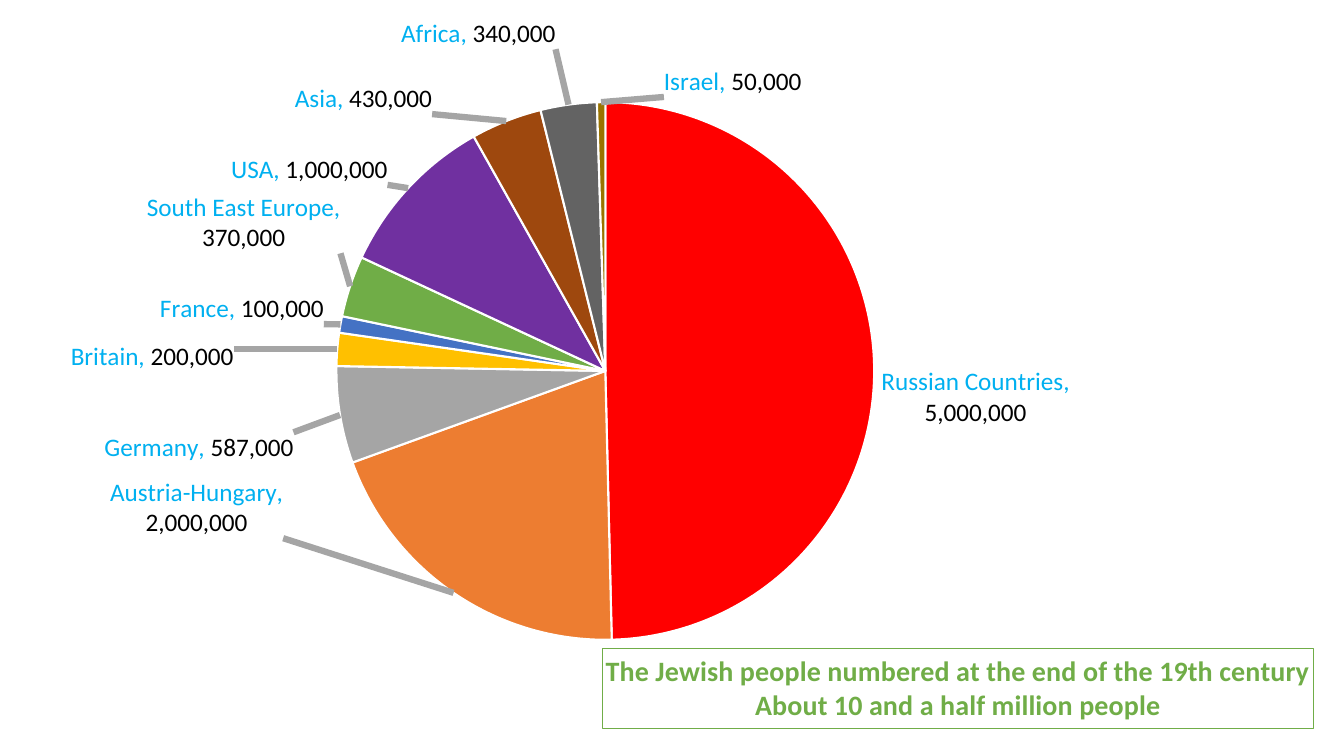
from pptx import Presentation
from pptx.chart.data import CategoryChartData
from pptx.dml.color import RGBColor
from pptx.enum.chart import XL_CHART_TYPE, XL_LABEL_POSITION
from pptx.oxml import parse_xml
from pptx.oxml.ns import nsdecls, qn
from pptx.util import Inches, Pt

RED = RGBColor(0xFF, 0x00, 0x00)
ORANGE = RGBColor(0xED, 0x7D, 0x31)
GRAY = RGBColor(0xA5, 0xA5, 0xA5)
YELLOW = RGBColor(0xFF, 0xC0, 0x00)
BLUE = RGBColor(0x44, 0x72, 0xC4)
GREEN = RGBColor(0x70, 0xAD, 0x47)
PURPLE = RGBColor(0x70, 0x30, 0xA0)
BROWN = RGBColor(0x9E, 0x48, 0x0E)
DARK_GRAY = RGBColor(0x63, 0x63, 0x63)
OLIVE = RGBColor(0x99, 0x73, 0x00)
SKY = RGBColor(0x00, 0xB0, 0xF0)
BLACK = RGBColor(0x00, 0x00, 0x00)
WHITE = RGBColor(0xFF, 0xFF, 0xFF)

FONT = "Calibri"
TITLE_LINES = (
    "The Jewish people numbered at the end of the 19th century",
    "About 10 and a half million people",
)
# region, population, slice colour, label shift as a share of the chart size
REGIONS = [
    ("Russian Countries", 5000000, RED, (0.001, 0.04)),
    ("Austria-Hungary", 2000000, ORANGE, (-0.123, -0.163)),
    ("Germany", 587000, GRAY, (-0.03, 0.022)),
    ("Britain", 200000, YELLOW, (-0.072, 0.011)),
    ("France", 100000, BLUE, (-0.008, 0.001)),
    ("South East Europe", 370000, GREEN, (-0.003, -0.042)),
    ("USA", 1000000, PURPLE, (-0.012, 0.001)),
    ("Asia", 430000, BROWN, (-0.053, -0.002)),
    ("Africa", 340000, DARK_GRAY, (-0.009, -0.067)),
    ("Israel", 50000, OLIVE, (0.097, 0.001)),
]


def place_after(element, **settings):
    parent = element.getparent()
    for layout in parent.findall(qn("c:layout")):
        parent.remove(layout)
    values = "".join(f'<c:{name} val="{value}"/>' for name, value in settings.items())
    element.addnext(parse_xml(
        f'<c:layout {nsdecls("c")}><c:manualLayout>{values}</c:manualLayout></c:layout>'
    ))


def style_title(chart):
    title = chart.chart_title
    frame = title.text_frame
    for index, line in enumerate(TITLE_LINES):
        paragraph = frame.add_paragraph() if index else frame.paragraphs[0]
        run = paragraph.add_run()
        run.text = line
        for font in (paragraph.font, run.font):
            font.name = FONT
            font.size = Pt(20)
            font.bold = True
            font.color.rgb = GREEN
    title.format.line.color.rgb = GREEN
    title.format.line.width = Pt(0.75)
    place_after(title._element.find(qn("c:tx")),
                xMode="edge", yMode="edge", x=0.463, y=0.877)


def style_label(label, region, population, shift):
    paragraph = label.text_frame.paragraphs[0]
    for text, color in ((f"{region}, ", SKY), (f"{population:,}", BLACK)):
        run = paragraph.add_run()
        run.text = text
        run.font.name = FONT
        run.font.size = Pt(18)
        run.font.bold = False
        run.font.color.rgb = color
    label.position = XL_LABEL_POSITION.OUTSIDE_END
    index = label._dLbls.xpath(f"c:dLbl/c:idx[@val='{label._idx}']")[0]
    place_after(index, x=shift[0], y=shift[1])


def style_leader_lines(labels):
    element = labels._element
    for tag in ("c:showLeaderLines", "c:leaderLines"):
        for child in element.findall(qn(tag)):
            element.remove(child)
    element.append(parse_xml(f'<c:showLeaderLines {nsdecls("c")} val="1"/>'))
    element.append(parse_xml(
        f'<c:leaderLines {nsdecls("c", "a")}><c:spPr><a:ln w="{Pt(4.5)}"><a:solidFill>'
        f'<a:srgbClr val="{GRAY}"/></a:solidFill></a:ln></c:spPr></c:leaderLines>'
    ))


def add_population_chart(slide, left, top, width, height):
    data = CategoryChartData(number_format="#,##0")
    data.categories = [region for region, *_ in REGIONS]
    data.add_series("Series 1", [population for _, population, *_ in REGIONS])
    chart = slide.shapes.add_chart(
        XL_CHART_TYPE.PIE, left, top, width, height, data).chart
    chart.has_legend = False
    chart.font.name = FONT
    chart.font.size = Pt(10)
    chart.font.color.rgb = BLACK
    style_title(chart)

    plot = chart.plots[0]
    plot.vary_by_categories = True
    series = plot.series[0]
    labels = series.data_labels
    labels.show_value = True
    labels.show_category_name = True
    labels.number_format = "#,##0"
    labels.number_format_is_linked = False
    labels.position = XL_LABEL_POSITION.OUTSIDE_END
    labels.font.name = FONT
    labels.font.size = Pt(18)
    labels.font.color.rgb = SKY
    for index, (region, population, color, shift) in enumerate(REGIONS):
        point = series.points[index]
        point.format.fill.solid()
        point.format.fill.fore_color.rgb = color
        point.format.line.color.rgb = WHITE
        point.format.line.width = Pt(1.5)
        label = point.data_label
        label._dLbls = labels._element
        style_label(label, region, population, shift)
    style_leader_lines(labels)

    pie = plot._element
    area = pie.getparent()
    for layout in area.findall(qn("c:layout")):
        area.remove(layout)
    place_after(pie, layoutTarget="inner", xMode="edge", yMode="edge",
                x=0.267, y=0.138, w=0.396, h=0.727)
    area.insert(0, area.find(qn("c:layout")))


def main():
    presentation = Presentation()
    presentation.slide_width = Inches(13.33)
    presentation.slide_height = Inches(7.5)
    slide = presentation.slides.add_slide(presentation.slide_layouts[6])
    add_population_chart(slide, Inches(-0.26), Inches(0), Inches(13.47), Inches(7.34))
    presentation.save("out.pptx")


if __name__ == "__main__":
    main()
